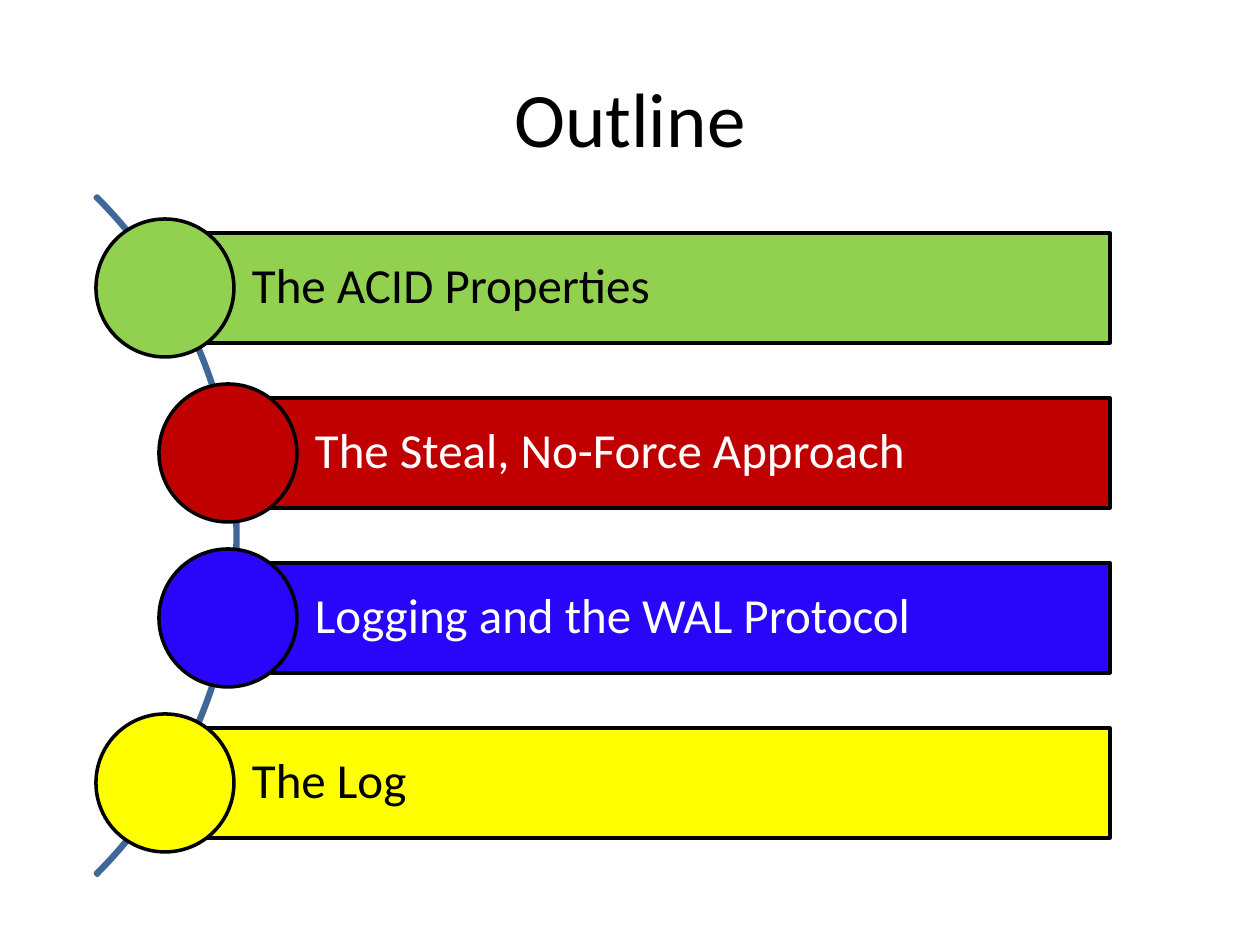
from pptx import Presentation
from pptx.dml.color import RGBColor
from pptx.enum.shapes import MSO_SHAPE
from pptx.enum.text import MSO_ANCHOR, PP_ALIGN
from pptx.util import Pt

ARC, BAR, DISC = MSO_SHAPE.BLOCK_ARC, MSO_SHAPE.RECTANGLE, MSO_SHAPE.OVAL
MIDDLE = MSO_ANCHOR.MIDDLE
LEFT, CENTER = PP_ALIGN.LEFT, PP_ALIGN.CENTER

PX = 914400 / 126
HEX = {
    "black": "000000", "white": "FFFFFF", "steel": "3F6797",
    "green": "92D050", "red": "C00000", "blue": "2906FA", "yellow": "FFFF00",
}
COLORS = {name: RGBColor.from_string(code) for name, code in HEX.items()}

# text, left edge of the bar, fill, text colour
ITEMS = [
    ("The ACID Properties", 165, "green", "black"),
    ("The Steal, No-Force Approach", 228, "red", "white"),
    ("Logging and the WAL Protocol", 228, "blue", "white"),
    ("The Log", 165, "yellow", "black"),
]
TOP, PITCH, RIGHT = 233, 165, 1110
HIGH, RADIUS = 110, 69

deck = Presentation()
deck.slide_width, deck.slide_height = round(1260 * PX), round(945 * PX)
slide = deck.slides.add_slide(deck.slide_layouts[6])
shapes = slide.shapes


def draw(kind, x, y, w, h, line, fill=None):
    shape = shapes.add_shape(kind, *(round(n * PX) for n in (x, y, w, h)))
    shape.shadow.inherit = False
    shape.line.color.rgb = COLORS[line]
    shape.line.width = Pt(2)
    if fill:
        shape.fill.solid()
        shape.fill.fore_color.rgb = COLORS[fill]
    else:
        shape.fill.background()
    return shape


def write(shape, text, size, color, align):
    frame = shape.text_frame
    frame.word_wrap = True
    frame.vertical_anchor = MIDDLE
    para = frame.paragraphs[0]
    para.text = text
    para.alignment = align
    para.font.name = "Calibri"
    para.font.size = Pt(size)
    para.font.color.rgb = COLORS[color]
    return frame


title = shapes.add_textbox(*(round(n * PX) for n in (63, 38, 1134, 158)))
write(title, "Outline", 44, "black", CENTER)

arc = draw(ARC, -723, 55, 961, 961, "steel")
for i, value in enumerate((189, 27, 0.003)):
    arc.adjustments[i] = value

for row, (text, left, fill, ink) in enumerate(ITEMS):
    top = TOP + row * PITCH
    bar = draw(BAR, left, top, RIGHT - left, HIGH, "black", fill)
    frame = write(bar, text, 28, ink, LEFT)
    frame.margin_left = round(87 * PX)
    frame.margin_right = frame.margin_top = frame.margin_bottom = round(10 * PX)
    frame.paragraphs[0].line_spacing = 0.9
    draw(DISC, left - RADIUS, top + HIGH / 2 - RADIUS,
         2 * RADIUS, 2 * RADIUS, "black", fill)

deck.save("out.pptx")
